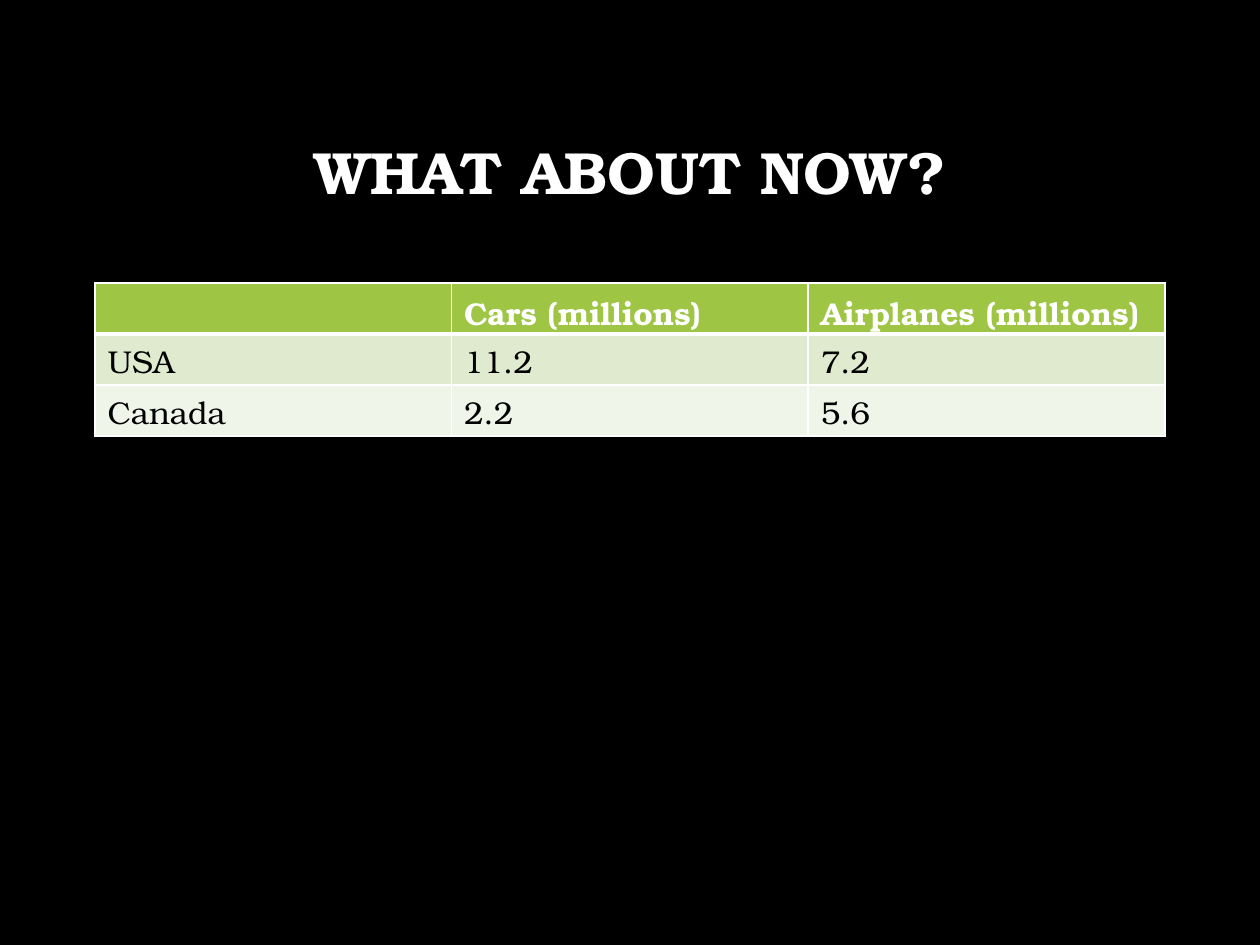
from lxml import etree
from pptx import Presentation
from pptx.dml.color import RGBColor
from pptx.enum import text
from pptx.oxml import ns
from pptx import util as u

TITLE = "WHAT ABOUT NOW?"
ROWS = [
    ("", "Cars (millions)", "Airplanes (millions)"),
    ("USA", "11.2", "7.2"),
    ("Canada", "2.2", "5.6"),
]

FONT = "TeX Gyre Bonum"
BLACK = RGBColor(0x00, 0x00, 0x00)
WHITE = RGBColor(0xFF, 0xFF, 0xFF)
GREEN = RGBColor(0x9E, 0xC5, 0x44)
BANDS = [RGBColor(0xDF, 0xEA, 0xCF), RGBColor(0xF0, 0xF5, 0xE9)]

LEFT, WIDTH = 95, 1070
TITLE_TOP, TITLE_HEIGHT = 84, 183
TABLE_TOP, ROW_HEIGHT = 283, 51


def px(n):
    return u.Emu(round(n * 914400 / 126))


def style(p, size, color, bold):
    p.font.name = FONT
    p.font.size = u.Pt(size)
    p.font.color.rgb = color
    p.font.bold = bold


def add_border(cell, side, points):
    props = cell._tc.get_or_add_tcPr()
    ln = etree.SubElement(props, ns.qn(f"a:ln{side}"), w=str(u.Pt(points)))
    fill = etree.SubElement(ln, ns.qn("a:solidFill"))
    etree.SubElement(fill, ns.qn("a:srgbClr"), val=str(WHITE))


def add_title(s):
    sp = s.shapes.add_textbox(px(LEFT), px(TITLE_TOP), px(WIDTH), px(TITLE_HEIGHT))
    tf = sp.text_frame
    tf.word_wrap = True
    tf.vertical_anchor = text.MSO_ANCHOR.MIDDLE
    p = tf.paragraphs[0]
    p.text = TITLE
    p.alignment = text.PP_ALIGN.CENTER
    p.line_spacing = 0.9
    style(p, 34, WHITE, True)


def add_data_table(s):
    table = s.shapes.add_table(
        len(ROWS), len(ROWS[0]), px(LEFT), px(TABLE_TOP),
        px(WIDTH), px(ROW_HEIGHT * len(ROWS))).table
    for i, row in enumerate(ROWS):
        header = i == 0
        for j, value in enumerate(row):
            cell = table.cell(i, j)
            for side in "LRTB":
                thick = (header and side == "B") or (i == 1 and side == "T")
                add_border(cell, side, 3 if thick else 1)
            cell.fill.solid()
            cell.fill.fore_color.rgb = GREEN if header else BANDS[(i - 1) % 2]
            p = cell.text_frame.paragraphs[0]
            p.text = value
            style(p, 18, WHITE if header else BLACK, header)


def main():
    prs = Presentation()
    prs.slide_width, prs.slide_height = px(1260), px(945)
    s = prs.slides.add_slide(prs.slide_layouts[6])
    s.background.fill.solid()
    s.background.fill.fore_color.rgb = BLACK
    add_title(s)
    add_data_table(s)
    prs.save("out.pptx")


if __name__ == "__main__":
    main()
